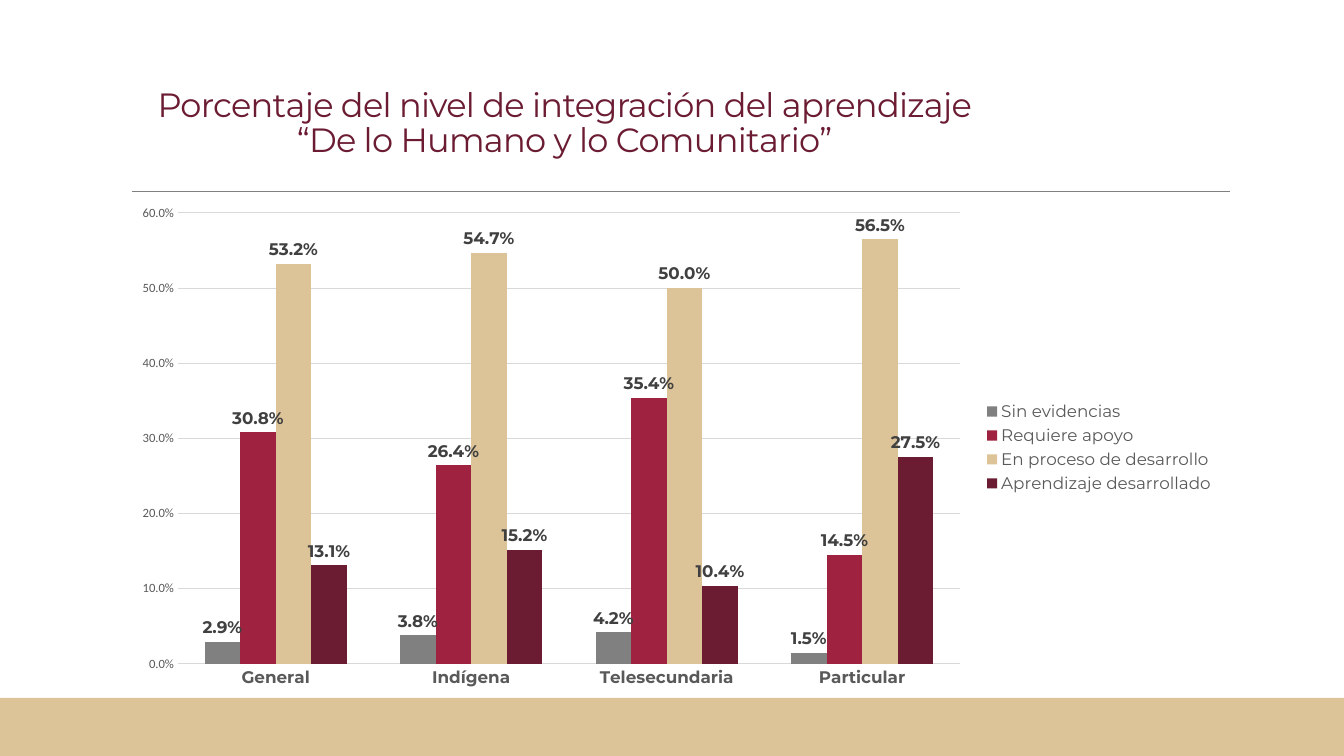
from lxml import etree
from pptx import Presentation
from pptx.chart.data import CategoryChartData
from pptx.dml.color import RGBColor
from pptx.enum.chart import (XL_CHART_TYPE, XL_LABEL_POSITION as LABEL_POS,
                             XL_LEGEND_POSITION as LEGEND_POS, XL_TICK_MARK as TICK)
from pptx.enum.shapes import MSO_CONNECTOR, MSO_SHAPE
from pptx.enum.text import MSO_ANCHOR, PP_ALIGN
from pptx.oxml.ns import qn
from pptx.util import Emu, Pt

WIDTH, HEIGHT = 1344, 756
EMU_PER_PX = 914400 / 100.8
FONT = "Montserrat"
GRAY, RED, SAND, WINE = "808080", "9F2240", "DDC398", "6B1C32"
TEXT_GRAY, LABEL_GRAY, GRID_GRAY = "595959", "404040", "D9D9D9"

TITLE = ["Porcentaje del nivel de integración del aprendizaje",
         "“De lo Humano y lo Comunitario”"]
CATEGORIES = ["General", "Indígena", "Telesecundaria", "Particular"]
SERIES = [
    ("Sin evidencias", GRAY, (0.029, 0.038, 0.042, 0.015)),
    ("Requiere apoyo", RED, (0.308, 0.264, 0.354, 0.145)),
    ("En proceso de desarrollo", SAND, (0.532, 0.547, 0.5, 0.565)),
    ("Aprendizaje desarrollado", WINE, (0.131, 0.152, 0.104, 0.275)),
]


def px(n):
    return Emu(round(n * EMU_PER_PX))


def rgb(color):
    return RGBColor.from_string(color)


def set_font(font, size, color, name=FONT, bold=False):
    font.size, font.name, font.bold = Pt(size), name, bold
    font.color.rgb = rgb(color)


def add_footer_band(slide, x, y, w, h):
    sp = slide.shapes.add_shape(MSO_SHAPE.RECTANGLE, px(x), px(y), px(w), px(h))
    sp.shadow.inherit = False
    sp.fill.solid()
    sp.fill.fore_color.rgb = rgb(SAND)
    sp.line.fill.background()


def add_divider(slide, x, y, w):
    line = slide.shapes.add_connector(MSO_CONNECTOR.STRAIGHT, px(x), px(y), px(x + w), px(y))
    line.line.color.rgb = rgb(GRAY)
    line.line.width = Pt(0.5)
    etree.SubElement(line._element.spPr, qn("a:effectLst"))


def add_title(slide, x, y, w, h):
    tf = slide.shapes.add_textbox(px(x), px(y), px(w), px(h)).text_frame
    tf.word_wrap = True
    tf.vertical_anchor = MSO_ANCHOR.BOTTOM
    p = tf.paragraphs[0]
    p.alignment = PP_ALIGN.CENTER
    p.line_spacing = 0.85
    for i, text in enumerate(TITLE):
        if i:
            p.add_line_break()
        r = p.add_run()
        r.text = text
        set_font(r.font, 24, WINE)
        r.font._element.set("spc", "-50")


def set_plot_layout(chart, **fractions):
    """Fix the inner plot area as fractions of the chart box."""
    plot_area = chart._chartSpace.chart.plotArea
    for old in plot_area.findall(qn("c:layout")):
        plot_area.remove(old)
    layout = etree.Element(qn("c:layout"))
    manual = etree.SubElement(layout, qn("c:manualLayout"))
    settings = {"layoutTarget": "inner", "xMode": "edge", "yMode": "edge", **fractions}
    for tag, value in settings.items():
        etree.SubElement(manual, qn(f"c:{tag}")).set("val", str(value))
    plot_area.insert(0, layout)


def style_axes(chart):
    for axis in (chart.category_axis, chart.value_axis):
        axis.major_tick_mark = axis.minor_tick_mark = TICK.NONE
        axis.format.line.fill.background()
    set_font(chart.category_axis.tick_labels.font, 12, TEXT_GRAY, bold=True)
    axis = chart.value_axis
    axis.minimum_scale, axis.maximum_scale, axis.major_unit = 0, 0.6, 0.1
    set_font(axis.tick_labels.font, 9, TEXT_GRAY, "Calibri")
    axis.tick_labels.number_format = "0.0%"
    axis.tick_labels.number_format_is_linked = False
    grid = axis.major_gridlines.format.line
    grid.color.rgb = rgb(GRID_GRAY)
    grid.width = Pt(0.75)


def style_series(series, color):
    series.format.fill.solid()
    series.format.fill.fore_color.rgb = rgb(color)
    labels = series.data_labels
    labels.show_value = True
    labels.position = LABEL_POS.OUTSIDE_END
    labels.number_format = "0.0%"
    labels.number_format_is_linked = False
    set_font(labels.font, 12, LABEL_GRAY, bold=True)


def add_level_chart(slide, x, y, w, h):
    data = CategoryChartData(number_format="0.0%")
    data.categories = CATEGORIES
    for name, _, values in SERIES:
        data.add_series(name, values)
    chart = slide.shapes.add_chart(XL_CHART_TYPE.COLUMN_CLUSTERED,
                                   px(x), px(y), px(w), px(h), data).chart
    set_font(chart.font, 10, "000000", "Calibri")
    chart.has_title = False
    chart.has_legend = True
    chart.legend.position = LEGEND_POS.RIGHT
    chart.legend.include_in_layout = False
    set_font(chart.legend.font, 12, TEXT_GRAY)
    set_plot_layout(chart, x=57 / w, y=17 / h, w=782 / w, h=451 / h)
    style_axes(chart)
    plot = chart.plots[0]
    plot.vary_by_categories = False
    plot.gap_width, plot.overlap = 150, 0
    for series, (_, color, _) in zip(plot.series, SERIES):
        style_series(series, color)


def main():
    prs = Presentation()
    prs.slide_width, prs.slide_height = px(WIDTH), px(HEIGHT)
    slide = prs.slides.add_slide(prs.slide_layouts[6])
    add_divider(slide, 132, 191, 1098)
    add_footer_band(slide, 0, 698, WIDTH, HEIGHT - 698)
    add_title(slide, 121, 57, 887, 107)
    add_level_chart(slide, 121, 196, 1104, 503)
    prs.save("out.pptx")


if __name__ == "__main__":
    main()
